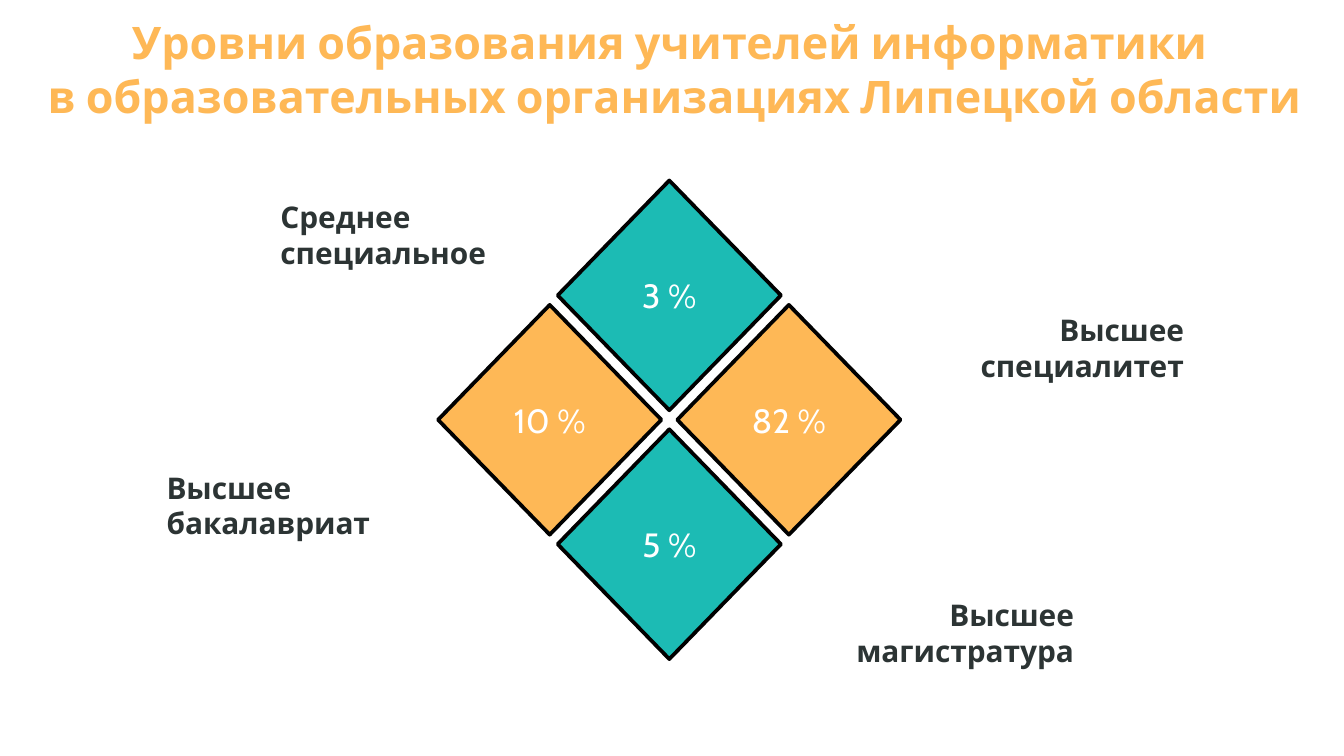
import pptx
import pptx.dml.color
import pptx.enum.shapes
import pptx.enum.text
import pptx.util

Cm = pptx.util.Cm
ALIGN = pptx.enum.text.PP_ALIGN
ANCHOR = pptx.enum.text.MSO_ANCHOR
FONT = "Cabin"
ORANGE, TEAL, DARK, WHITE, BLACK = "FEB856", "1CBBB4", "2C3434", "FFFFFF", "000000"

# Content
TITLE = "Уровни образования учителей информатики \nв образовательных организациях Липецкой области"
# Share, fill, column and row steps from the centre of the figure
DIAMONDS = [
    ("82 %", ORANGE, 1, 0),
    ("5 %", TEAL, 0, 1),
    ("10 %", ORANGE, -1, 0),
    ("3 %", TEAL, 0, -1),
]
# Level, left, top, width (cm), alignment
LABELS = [
    ("Среднее специальное", 5.05, 3.63, 6.48, ALIGN.LEFT),
    ("Высшее бакалавриат", 2.9, 8.74, 6.48, ALIGN.LEFT),
    ("Высшее специалитет", 16.03, 5.77, 6.6, ALIGN.RIGHT),
    ("Высшее магистратура", 14.07, 11.15, 6.48, ALIGN.RIGHT),
]

# Diamond layout (cm)
CENTER_X, CENTER_Y = 12.65, 7.93
STEP_X, STEP_Y = 2.26, 2.35
DIAMOND_WIDTH, DIAMOND_HEIGHT = 4.22, 4.34


def color(value):
    return pptx.dml.color.RGBColor.from_string(value)


def write(shape, text, size, font_color, alignment, anchor, bold=False):
    frame = shape.text_frame
    frame.word_wrap = True
    frame.vertical_anchor = anchor
    frame.text = text
    for paragraph in frame.paragraphs:
        paragraph.alignment = alignment
        for run in paragraph.runs:
            run.font.name = FONT
            run.font.size = pptx.util.Pt(size)
            run.font.bold = bold
            run.font.color.rgb = color(font_color)


presentation = pptx.Presentation()
presentation.slide_width, presentation.slide_height = Cm(25.4), Cm(14.28)
slide = presentation.slides.add_slide(presentation.slide_layouts[6])

# Diamonds
for share, fill, column, row in DIAMONDS:
    left = CENTER_X + column * STEP_X - DIAMOND_WIDTH / 2
    top = CENTER_Y + row * STEP_Y - DIAMOND_HEIGHT / 2
    diamond = slide.shapes.add_shape(
        pptx.enum.shapes.MSO_SHAPE.DIAMOND,
        Cm(left), Cm(top), Cm(DIAMOND_WIDTH), Cm(DIAMOND_HEIGHT))
    diamond.shadow.inherit = False
    diamond.fill.solid()
    diamond.fill.fore_color.rgb = color(fill)
    diamond.line.color.rgb = color(BLACK)
    diamond.line.width = pptx.util.Pt(2)
    write(diamond, share, 18, WHITE, ALIGN.CENTER, ANCHOR.MIDDLE)

# Labels
for level, left, top, width, alignment in LABELS:
    label = slide.shapes.add_textbox(Cm(left), Cm(top), Cm(width), Cm(0.94))
    write(label, level, 16, DARK, alignment, ANCHOR.TOP, bold=True)
    label.text_frame.auto_size = pptx.enum.text.MSO_AUTO_SIZE.SHAPE_TO_FIT_TEXT

# Title
title = slide.shapes.add_textbox(Cm(0.1), Cm(0.36), Cm(25.3), Cm(1.88))
write(title, TITLE, 24, ORANGE, ALIGN.CENTER, ANCHOR.MIDDLE, bold=True)

presentation.save("out.pptx")
